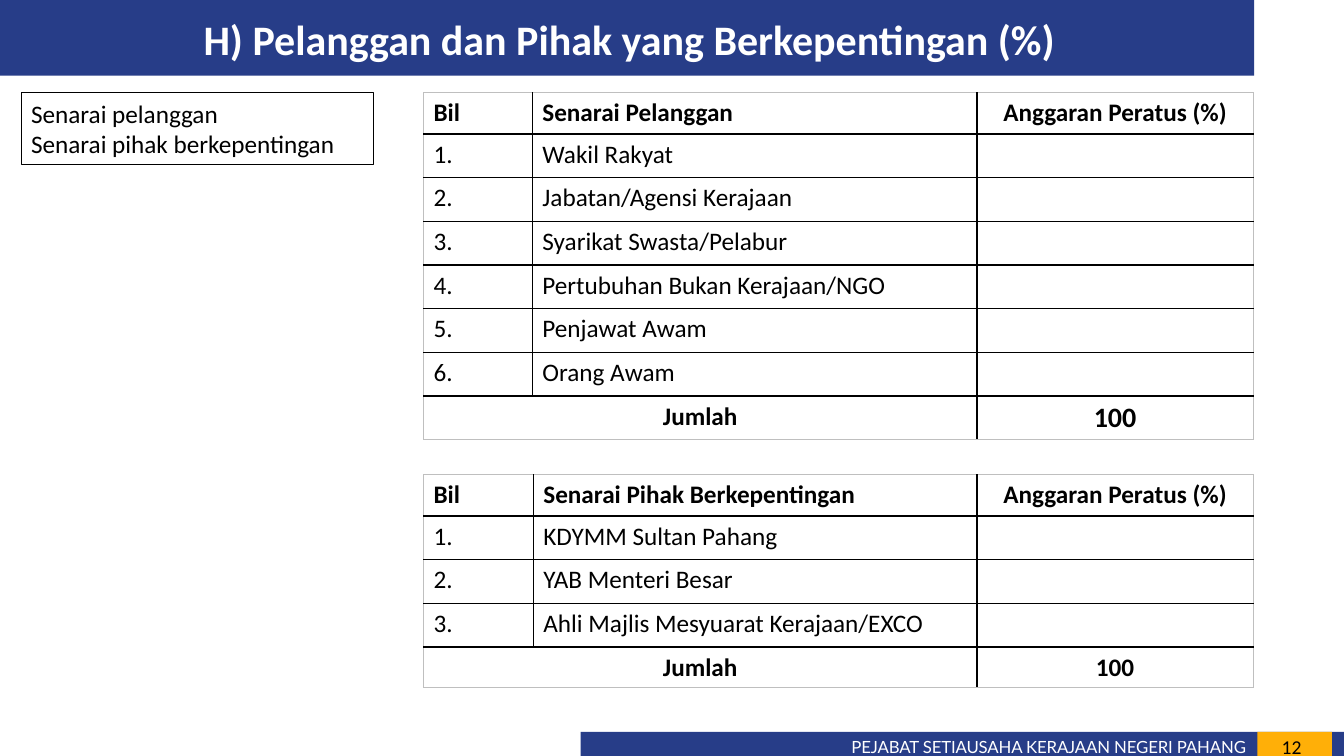
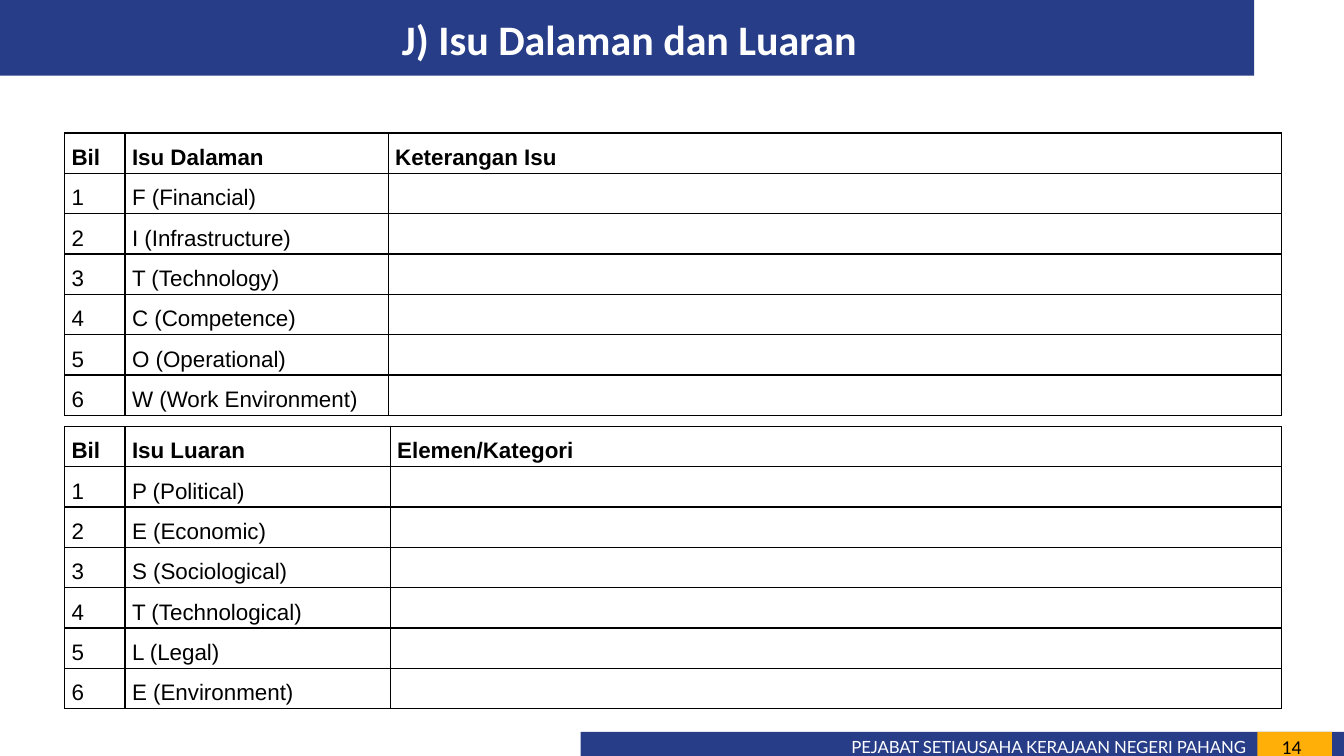
import lxml.etree
import pptx
import pptx.dml.color
import pptx.enum.shapes
import pptx.enum.text
import pptx.oxml.ns
import pptx.util

EMU_PER_PX = 9144
ALIGN = pptx.enum.text.PP_ALIGN
ANCHOR = pptx.enum.text.MSO_ANCHOR
BLACK, WHITE, NAVY, AMBER, GREY = "000000", "FFFFFF", "273D88", "FFAF08", "BFBFBF"


def px(length):
    return pptx.util.Emu(round(length * EMU_PER_PX))


def color(value):
    return pptx.dml.color.RGBColor.from_string(value)


def write(frame, text, *, size=18, font="Calibri", ink=BLACK, bold=False,
          align=ALIGN.LEFT, line_spacing=None, tracking=None):
    """Fill a text frame, one paragraph for each line of text."""
    for index, line in enumerate(text.split("\n")):
        para = frame.add_paragraph() if index else frame.paragraphs[0]
        para.alignment = align
        if line_spacing:
            para.line_spacing = line_spacing
        span = para.add_run()
        span.text = line
        span.font.size = pptx.util.Pt(size)
        span.font.name = font
        span.font.bold = bold
        span.font.color.rgb = color(ink)
        if tracking:
            span._r.get_or_add_rPr().set("spc", str(tracking))


def draw_border(cell, side, ink, points):
    """Draw one cell edge; side is L, R, T or B."""
    qn = pptx.oxml.ns.qn
    edge = lxml.etree.SubElement(cell._tc.get_or_add_tcPr(), qn(f"a:ln{side}"),
                                 w=str(pptx.util.Pt(points)))
    fill = lxml.etree.SubElement(edge, qn("a:solidFill"))
    lxml.etree.SubElement(fill, qn("a:srgbClr"), val=ink)


class Deck:
    def __init__(self):
        self.deck = pptx.Presentation()
        self.deck.slide_width, self.deck.slide_height = px(1333), px(750)
        self.page = None

    def add_page(self, title, number):
        """Start a slide with its bands, title and footer."""
        self.page = self.deck.slides.add_slide(self.deck.slide_layouts[6])
        self.rectangle(0, 0, 1244, 75, fill=NAVY)
        self.rectangle(576, 726, 757, 24, fill=NAVY)
        self.rectangle(1247, 726, 74, 24, fill=AMBER)
        self.text(752, 729, 484, 21, "PEJABAT SETIAUSAHA KERAJAAN NEGERI PAHANG",
                  margins=(0, 2, 0, 0), size=12, font="Lato", ink=WHITE,
                  align=ALIGN.RIGHT, tracking=-10)
        self.text(1256, 724, 50, 26, str(number), size=14, align=ALIGN.CENTER)
        self.text(21, 8, 1207, 61, title, size=30, ink=WHITE, bold=True,
                  align=ALIGN.CENTER)

    def rectangle(self, left, top, width, height, fill=None, line=None):
        box = self.page.shapes.add_shape(
            pptx.enum.shapes.MSO_SHAPE.RECTANGLE,
            px(left), px(top), px(width), px(height))
        box.shadow.inherit = False
        if fill:
            box.fill.solid()
            box.fill.fore_color.rgb = color(fill)
        else:
            box.fill.background()
        if line:
            box.line.color.rgb = color(line)
            box.line.width = pptx.util.Pt(0.75)
        else:
            box.line.fill.background()
        return box

    def framed_text(self, left, top, width, height, text):
        frame = self.rectangle(left, top, width, height, line=BLACK).text_frame
        frame.word_wrap = True
        frame.vertical_anchor = ANCHOR.MIDDLE
        write(frame, text)

    def text(self, left, top, width, height, text, margins=(10, 5, 10, 5), **style):
        box = self.page.shapes.add_textbox(px(left), px(top), px(width), px(height))
        frame = box.text_frame
        frame.word_wrap = True
        (frame.margin_left, frame.margin_top,
         frame.margin_right, frame.margin_bottom) = map(px, margins)
        write(frame, text, **style)

    def table(self, left, top, widths, heights, rows, outer=(BLACK, 1),
              margins=(10, 5), style=None):
        """Add a grid with a bold first row; rows hold (text, format) cells."""
        grid = self.page.shapes.add_table(
            len(rows), len(widths), px(left), px(top),
            px(sum(widths)), px(sum(heights))).table
        grid.first_row = grid.horz_banding = False
        for column, width in zip(grid.columns, widths):
            column.width = px(width)
        last_row, last_column = len(rows) - 1, len(widths) - 1
        for r, (row, height) in enumerate(zip(rows, heights)):
            grid.rows[r].height = px(height)
            for c, (text, cell_style) in enumerate(row):
                cell = grid.cell(r, c)
                cell.margin_left = cell.margin_right = px(margins[0])
                cell.margin_top = cell.margin_bottom = px(margins[1])
                on_edge = {"L": c == 0, "R": c == last_column,
                           "T": r == 0, "B": r == last_row}
                for side, is_outer in on_edge.items():
                    draw_border(cell, side, *(outer if is_outer else (BLACK, 1)))
                cell.fill.background()
                if text:
                    write(cell.text_frame, text,
                          **{"bold": r == 0, **(style or {}), **cell_style})
        return grid

    def share_table(self, top, widths, height, footer, heading, names, total_size=18):
        """Add a numbered list with a percentage column and a total row."""
        centred = {"align": ALIGN.CENTER}
        total = {"bold": True, **centred}
        rows = [[("Bil", {}), (heading, {}), ("Anggaran Peratus (%)", centred)]]
        rows += [[(f"{number}.", {}), (name, {}), ("", {})]
                 for number, name in enumerate(names, 1)]
        rows.append([("Jumlah", total), ("", {}), ("100", {**total, "size": total_size})])
        header = 41
        body = (height - header - footer) / len(names)
        heights = [header] + [body] * len(names) + [footer]
        grid = self.table(420, top, widths, heights, rows, outer=(GREY, 0.5))
        grid.cell(len(rows) - 1, 0).merge(grid.cell(len(rows) - 1, 1))

    def issue_table(self, top, widths, headings, issues):
        rows = [[(heading, {}) for heading in headings]]
        rows += [[(str(number), {}), (issue, {}), ("", {})]
                 for number, issue in enumerate(issues, 1)]
        self.table(64, top, widths, [40] * len(rows), rows, margins=(7, 0),
                   style={"size": 16, "font": "Arial", "line_spacing": 1.5,
                          "align": ALIGN.JUSTIFY})


def main():
    deck = Deck()

    deck.add_page("H) Pelanggan dan Pihak yang Berkepentingan (%)", 12)
    deck.framed_text(21, 92, 350, 71, "Senarai pelanggan\nSenarai pihak berkepentingan")
    deck.share_table(92, [108, 441, 274], 344, 43, "Senarai Pelanggan", [
        "Wakil Rakyat", "Jabatan/Agensi Kerajaan", "Syarikat Swasta/Pelabur",
        "Pertubuhan Bukan Kerajaan/NGO", "Penjawat Awam", "Orang Awam"], total_size=20)
    deck.share_table(471, [109, 440, 274], 211, 40, "Senarai Pihak Berkepentingan", [
        "KDYMM Sultan Pahang", "YAB Menteri Besar",
        "Ahli Majlis Mesyuarat Kerajaan/EXCO"])

    deck.add_page("J) Isu Dalaman dan Luaran", 14)
    deck.issue_table(132, [60, 261, 886], ["Bil", "Isu Dalaman", "Keterangan Isu"], [
        "F (Financial)", "I (Infrastructure)", "T (Technology)",
        "C (Competence)", "O (Operational)", "W (Work Environment)"])
    deck.issue_table(423, [60, 263, 884], ["Bil", "Isu Luaran", "Elemen/Kategori"], [
        "P (Political)", "E (Economic)", "S (Sociological)",
        "T (Technological)", "L (Legal)", "E (Environment)"])

    deck.deck.save("out.pptx")


if __name__ == "__main__":
    main()
